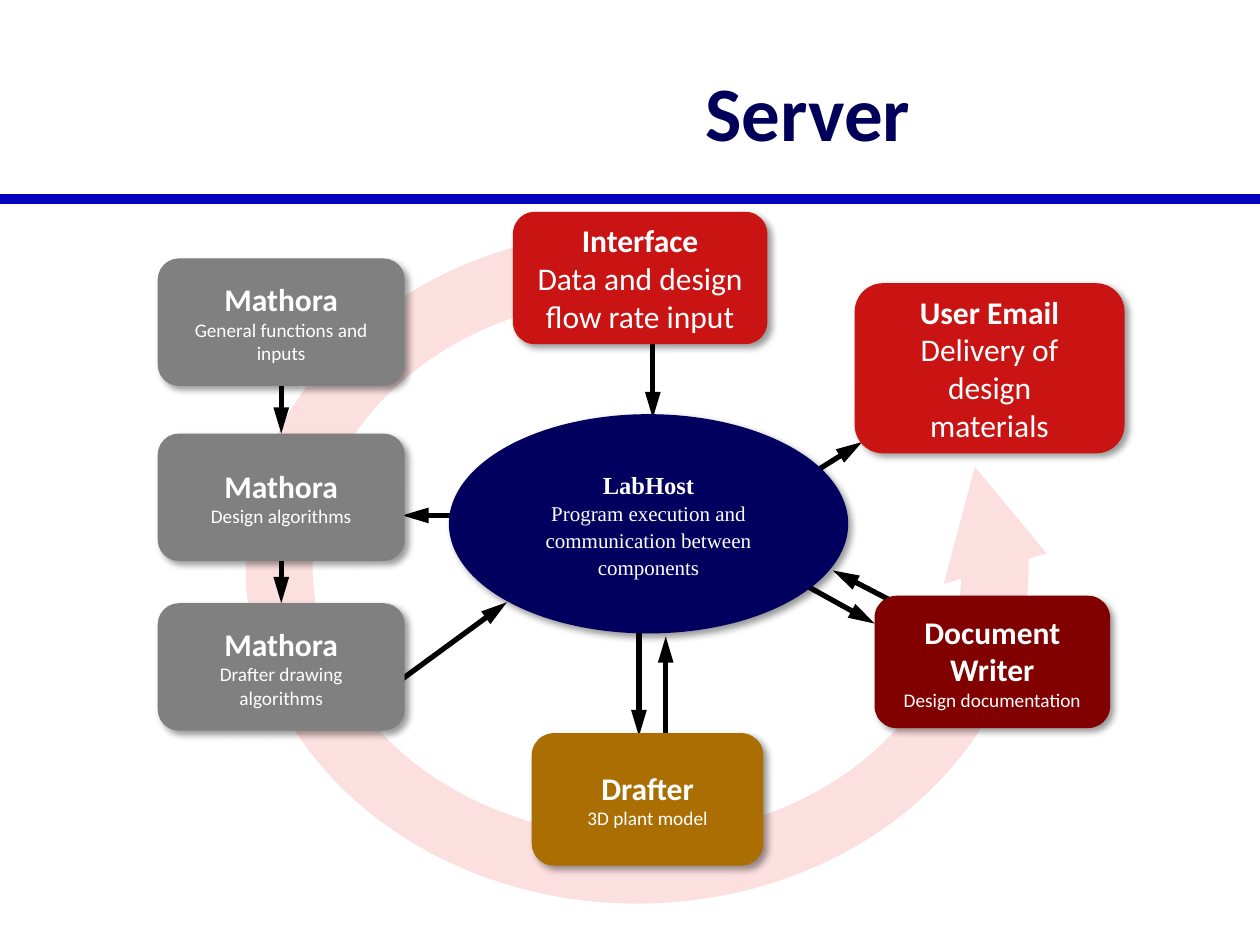
from lxml.etree import SubElement
from pptx import Presentation
from pptx.dml.color import RGBColor
from pptx.enum.shapes import MSO_CONNECTOR as Link, MSO_SHAPE as Shape
from pptx.enum.text import MSO_ANCHOR as Anchor, PP_ALIGN as Align
from pptx.oxml.ns import qn
from pptx.util import Cm, Pt

NAVY = RGBColor(0x00, 0x00, 0x5A)
DEEP_NAVY = RGBColor(0x02, 0x00, 0x5F)
BLUE = RGBColor(0x03, 0x00, 0xBE)
PINK = RGBColor(0xFC, 0xDF, 0xDF)
RED = RGBColor(0xCA, 0x14, 0x14)
MAROON = RGBColor(0x81, 0x00, 0x00)
OCHRE = RGBColor(0xAA, 0x6E, 0x03)
GRAY = RGBColor(0x80, 0x80, 0x80)
BLACK = RGBColor(0x00, 0x00, 0x00)
WHITE = RGBColor(0xFF, 0xFF, 0xFF)

RING_ADJUSTMENTS = (0.094, 10.092, 215.835, 66.29, 0.075)
CALC_TASKS = ("General functions and inputs", "Design algorithms", "Drafter drawing algorithms")
CALC_TOPS = (0.97, 4.5, 7.92)
STEPS = (
    (7.16, 0.03, 5.13, 2.67, RED, "Interface", "Data and design flow rate input", 18),
    (7.54, 10.54, 4.67, 2.67, OCHRE, "Drafter", "3D plant model", 11),
    (14.45, 7.77, 4.75, 2.67, MAROON, "Document Writer", "Design documentation", 11),
    (14.05, 1.47, 5.44, 3.43, RED, "User Email", "Delivery of design materials", 18, 0.45),
)
FLOWS = (
    (4.72, 9.6, 7.04, 7.9),
    (6.48, 6.15, 4.93, 6.15),
    (9.7, 7.85, 9.7, 10.6),
    (10.24, 10.67, 10.24, 8.59),
    (12.52, 7.26, 14.45, 8.33),
    (14.94, 7.95, 13.61, 7.26),
    (9.98, 2.44, 9.98, 4.19),
    (12.9, 5.49, 14.2, 4.67),
)


def add_line(slide, ends, color, width):
    line = slide.shapes.add_connector(Link.STRAIGHT, *map(Cm, ends))
    line.line.color.rgb = color
    line.line.width = Pt(width)
    SubElement(line.element.spPr, qn("a:effectLst"))
    return line


def add_arrow(slide, ends):
    arrow = add_line(slide, ends, BLACK, 3)
    SubElement(arrow.element.spPr.find(qn("a:ln")), qn("a:tailEnd"),
               type="triangle", w="med", len="lg")
    return arrow


def format_paragraph(paragraph, size, font, color, bold):
    paragraph.alignment = Align.CENTER
    paragraph.font.size = Pt(size)
    paragraph.font.name = font
    paragraph.font.color.rgb = color
    paragraph.font.bold = bold


def add_filled(slide, kind, box, color):
    shape = slide.shapes.add_shape(kind, *map(Cm, box))
    shape.shadow.inherit = False
    shape.fill.solid()
    shape.fill.fore_color.rgb = color
    shape.line.fill.background()
    return shape


def add_step(slide, box, color, name, task, task_size, margin=0.25,
             kind=Shape.ROUNDED_RECTANGLE, font="Calibri", name_size=18, spacing=1.0):
    step = add_filled(slide, kind, box, color)
    effects = step.element.spPr.find(qn("a:effectLst"))
    shadow = SubElement(effects, qn("a:outerShdw"), blurRad=str(Pt(4)), dist=str(Pt(3)),
                        dir="2700000", algn="tl", rotWithShape="0")
    shade = SubElement(shadow, qn("a:srgbClr"), val=str(BLACK))
    SubElement(shade, qn("a:alpha"), val="40000")

    frame = step.text_frame
    frame.word_wrap = True
    frame.vertical_anchor = Anchor.MIDDLE
    frame.margin_left = frame.margin_right = Cm(margin)
    frame.text = f"{name}\n{task}"
    for paragraph, size, bold in zip(frame.paragraphs, (name_size, task_size), (True, False)):
        format_paragraph(paragraph, size, font, WHITE, bold)
        paragraph.line_spacing = spacing
    return step


def add_header(slide, left, top, width, height):
    title = slide.shapes.add_textbox(Cm(left), Cm(top), Cm(width), Cm(height))
    frame = title.text_frame
    frame.word_wrap = True
    frame.vertical_anchor = Anchor.MIDDLE
    frame.text = "Server"
    format_paragraph(frame.paragraphs[0], 44, "Calibri", NAVY, True)


def add_diagram(slide, left, top, height):
    def placed(x, y, w, h):
        return left + x, top + y, w, h

    ring = add_filled(slide, Shape.CIRCULAR_ARROW, placed(1.37, 0, 16.59, height), PINK)
    for index, value in enumerate(RING_ADJUSTMENTS):
        ring.adjustments[index] = value
    ring.element.spPr.find(qn("a:xfrm")).set("flipV", "1")

    for x1, y1, x2, y2 in FLOWS:
        add_arrow(slide, (left + x1, top + y1, left + x2, top + y2))

    add_step(slide, placed(5.87, 4.11, 8.05, 4.42), DEEP_NAVY, "LabHost",
             "Program execution and communication between components", 12,
             kind=Shape.OVAL, font="Times New Roman", name_size=14, spacing=1.07)
    for x, y, w, h, *content in STEPS:
        add_step(slide, placed(x, y, w, h), *content)

    calculations = [add_step(slide, placed(0, y, 4.98, 2.57), GRAY, "Mathora", task, 11)
                    for y, task in zip(CALC_TOPS, CALC_TASKS)]
    for upper, lower in zip(calculations, calculations[1:]):
        arrow = add_arrow(slide, (0, 0, 0, 0))
        arrow.begin_connect(upper, 2)
        arrow.end_connect(lower, 0)


def main():
    deck = Presentation()
    deck.slide_width, deck.slide_height = Cm(25.4), Cm(19.05)
    slide = deck.slides.add_slide(deck.slide_layouts[6])
    add_line(slide, (0, 4.01, 25.4, 4.01), BLUE, 6)
    add_header(slide, 7.82, 0.64, 16.94, 3.18)
    add_diagram(slide, 3.18, 4.24, 14.38)
    deck.save("out.pptx")


if __name__ == "__main__":
    main()
